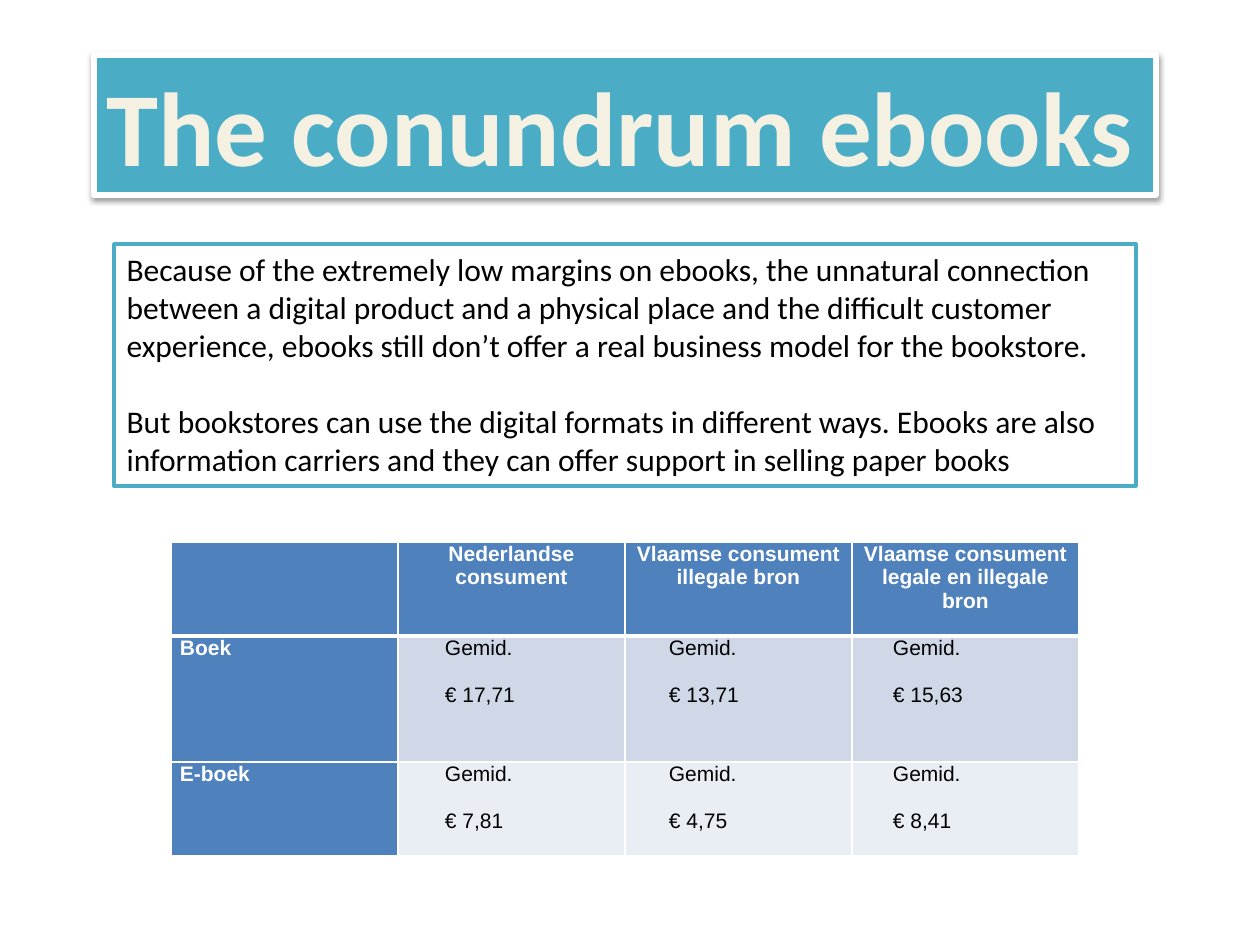
"""Build the slide on the conundrum of ebooks, with its table of average prices."""
from lxml import etree
from pptx import Presentation
from pptx import util as u
from pptx.dml.color import RGBColor
from pptx.enum import text
from pptx.oxml import ns, parse_xml

COLOURS = {
    "white": "FFFFFF", "black": "000000", "cream": "F4F1E3", "teal": "4BACC6",
    "blue": "4F81BD", "band": "D0D8E8", "pale": "E9EDF4",
}
ARGUMENTS = [
    "Because of the extremely low margins on ebooks, the unnatural connection between "
    "a digital product and a physical place and the difficult customer experience, "
    "ebooks still don’t offer a real business model for the bookstore.",
    "But bookstores can use the digital formats in different ways. Ebooks are also "
    "information carriers and they can offer support in selling paper books",
]
CONSUMERS = [
    "Nederlandse consument",
    "Vlaamse consument illegale bron",
    "Vlaamse consument legale en illegale bron",
]
PRICES = [
    ("Boek", "band", ["€ 17,71", "€ 13,71", "€ 15,63"]),
    ("E-boek", "pale", ["€ 7,81", "€ 4,75", "€ 8,41"]),
]
PRICE_INDENTS = [38, 35, 32]
COLUMN_WIDTH = 227
ROW_HEIGHTS = [94, 126, 94]


def px(length):
    """Turn pixels into EMU."""
    return u.Emu(round(length * 914400 / 126))


def rgb(name):
    """Look up a named colour."""
    return RGBColor.from_string(COLOURS[name])


def write(frame, lines, font, size, colour, bold=False, gap=0,
          align=text.PP_ALIGN.LEFT):
    """Write lines as paragraphs, with a gap in points between them."""
    for number, line in enumerate(lines):
        paragraph = frame.add_paragraph() if number else frame.paragraphs[0]
        paragraph.alignment = align
        paragraph.space_before = u.Pt(gap if number else 0)
        run = paragraph.add_run()
        run.text = line
        run.font.name = font
        run.font.size = u.Pt(size)
        run.font.bold = bold
        run.font.color.rgb = rgb(colour)


def frame_panel(panel, box, fill, outline, weight):
    """Place a placeholder as a filled and outlined panel, and return its text frame."""
    panel.left, panel.top, panel.width, panel.height = map(px, box)
    panel.fill.solid()
    panel.fill.fore_color.rgb = rgb(fill)
    panel.line.color.rgb = rgb(outline)
    panel.line.width = u.Pt(weight)
    frame = panel.text_frame
    frame.word_wrap = True
    frame.auto_size = text.MSO_AUTO_SIZE.NONE
    frame.vertical_anchor = text.MSO_ANCHOR.TOP
    return frame


def add_shadow(panel):
    """Give a panel a soft shadow below it."""
    panel.element.spPr.append(parse_xml(
        f'<a:effectLst {ns.nsdecls("a")}><a:outerShdw blurRad="{u.Pt(3.1)}" '
        f'dist="{u.Pt(1.6)}" dir="5400000" rotWithShape="0">'
        f'<a:srgbClr val="{COLOURS["black"]}"><a:alpha val="38000"/></a:srgbClr>'
        '</a:outerShdw></a:effectLst>'))


def remove_bullets(frame):
    """Set paragraphs flush left without bullets."""
    for paragraph in frame.paragraphs:
        properties = paragraph._p.get_or_add_pPr()
        properties.set("marL", "0")
        properties.set("indent", "0")
        etree.SubElement(properties, ns.qn("a:buNone"))


def style_cell(cell, fill, top=1, bottom=1, indent=0):
    """Set the borders, fill and margins of a cell."""
    properties = cell._tc.get_or_add_tcPr()
    for side, weight in (("L", 1), ("R", 1), ("T", top), ("B", bottom)):
        properties.append(parse_xml(
            f'<a:ln{side} {ns.nsdecls("a")} w="{u.Pt(weight)}"><a:solidFill>'
            f'<a:srgbClr val="{COLOURS["white"]}"/></a:solidFill></a:ln{side}>'))
    cell.fill.solid()
    cell.fill.fore_color.rgb = rgb(fill)
    cell.margin_left, cell.margin_right = px(9 + indent), px(9)
    cell.margin_top = cell.margin_bottom = 0


def add_prices(slide):
    """Add the table of average prices."""
    columns = len(CONSUMERS) + 1
    prices = slide.shapes.add_table(
        len(ROW_HEIGHTS), columns, px(171), px(542),
        px(COLUMN_WIDTH * columns), px(sum(ROW_HEIGHTS))).table
    prices.first_col = True
    for column in prices.columns:
        column.width = px(COLUMN_WIDTH)
    for row, height in zip(prices.rows, ROW_HEIGHTS):
        row.height = px(height)

    for column, consumer in enumerate([""] + CONSUMERS):
        heading = prices.cell(0, column)
        style_cell(heading, "blue", bottom=3)
        if consumer:
            write(heading.text_frame, [consumer], "Arial", 12, "white", True,
                  align=text.PP_ALIGN.CENTER)

    for row, (product, fill, amounts) in enumerate(PRICES, 1):
        top = 3 if row == 1 else 1
        label = prices.cell(row, 0)
        style_cell(label, "blue", top)
        write(label.text_frame, [product], "Arial", 12, "white", True)
        for column, (amount, indent) in enumerate(zip(amounts, PRICE_INDENTS), 1):
            average = prices.cell(row, column)
            style_cell(average, fill, top, indent=indent)
            write(average.text_frame, ["Gemid.", amount], "Arial", 12, "black",
                  gap=13.5)


def main():
    """Build and save the slide."""
    deck = Presentation()
    deck.slide_width, deck.slide_height = px(1260), px(945)
    slide = deck.slides.add_slide(deck.slide_layouts[1])
    add_prices(slide)

    title = slide.shapes.title
    heading = frame_panel(title, (94, 55, 1062, 140), "teal", "white", 3)
    write(heading, ["The conundrum ebooks"], "Calibri", 60, "cream", True)
    add_shadow(title)

    argument = frame_panel(slide.placeholders[1], (114, 244, 1022, 242),
                           "white", "teal", 2)
    write(argument, ARGUMENTS, "Calibri", 18, "black", gap=22)
    remove_bullets(argument)
    deck.save("out.pptx")


if __name__ == "__main__":
    main()
